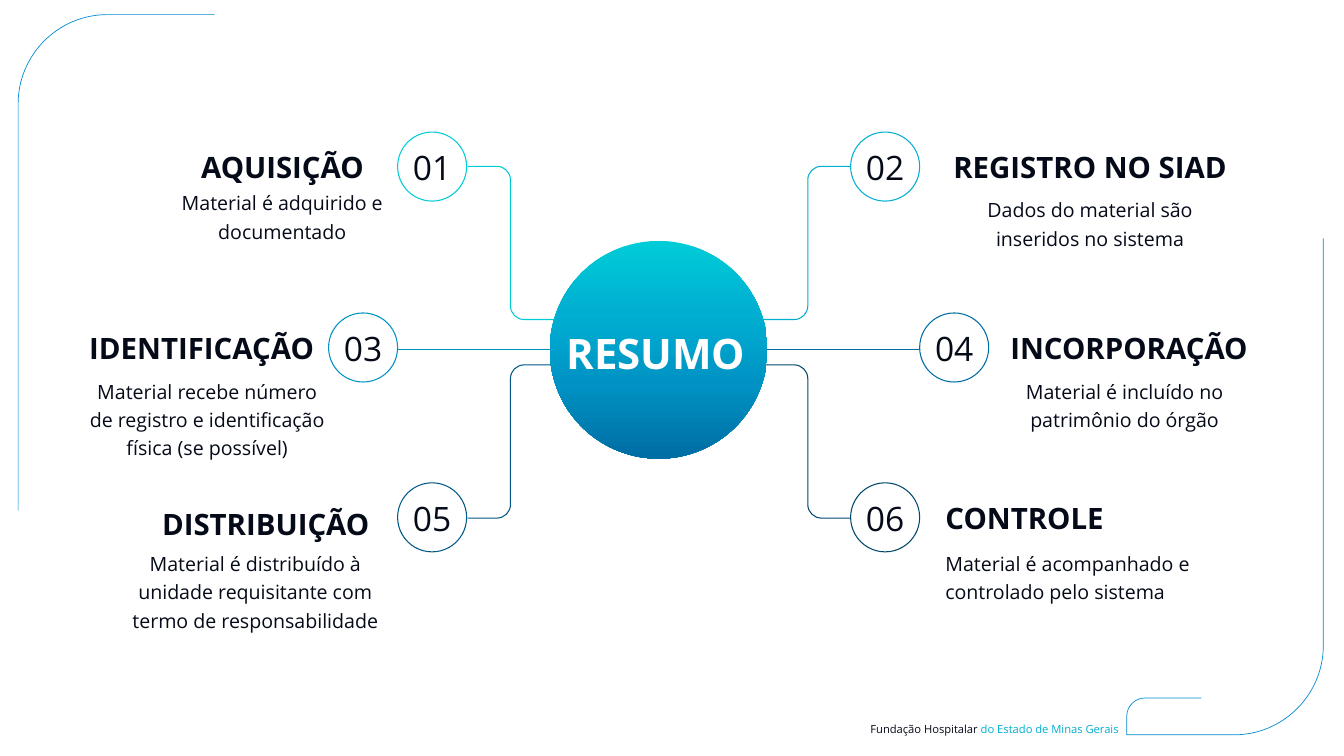
"""Builds the RESUMO slide: a central hub with six numbered steps around it."""
from copy import deepcopy
from dataclasses import dataclass

from lxml import etree
from pptx import Presentation
from pptx.dml.color import RGBColor
from pptx.enum.shapes import MSO_CONNECTOR, MSO_SHAPE
from pptx.enum.text import MSO_AUTO_SIZE, PP_ALIGN
from pptx.oxml.ns import qn
from pptx.util import Inches, Pt

LEFT, CENTER, RIGHT = PP_ALIGN.LEFT, PP_ALIGN.CENTER, PP_ALIGN.RIGHT
FIT = MSO_AUTO_SIZE.SHAPE_TO_FIT_TEXT
STRAIGHT = MSO_CONNECTOR.STRAIGHT
ELLIPSE = MSO_SHAPE.OVAL

RING = 1.37
MIRROR = 26.16
MIDDLE = 6.94
ARC_PULL = 0.55


@dataclass(frozen=True)
class Theme:
    font: str = "Open Sans"
    ink: str = "050A19"
    white: str = "FFFFFF"
    accent: str = "00AFD2"
    frame: str = "008BD2"
    steps: tuple = ("00CCD7", "00AFD2", "0092C3", "006DA4", "005986", "00486C")
    hub: tuple = ((0, "00CCD7"), (0.33, "00AFD2"), (0.66, "0092C3"), (1, "006DA4"))
    hub_size: int = 60
    number_size: int = 48
    title_size: int = 42
    body_size: int = 28
    footer_size: int = 16
    thin: float = 1
    line: float = 1.5


def toward(corner, target, distance):
    """Return the point at a distance from a corner along an axis-aligned leg."""
    return tuple(here + distance * ((there > here) - (there < here))
                 for here, there in zip(corner, target))


class Page:
    def __init__(self, slide, theme):
        self.shapes = slide.shapes
        self.theme = theme

    def stroke(self, shape, color, width):
        shape.line.color.rgb = RGBColor.from_string(color)
        shape.line.width = Pt(width)

    def route(self, corners, color, width):
        points, curves = [corners[0][:2]], {}
        for before, (x, y, radius), after in zip(corners, corners[1:], corners[2:]):
            corner = (x, y)
            points.append(toward(corner, before, radius))
            if radius:
                points.append(toward(corner, after, radius))
                pull = radius * (1 - ARC_PULL)
                curves[len(points) - 1] = [toward(corner, leg, pull) for leg in (before, after)]
        points.append(corners[-1][:2])
        origin = [min(axis) for axis in zip(*points)]
        points = [tuple(map(Inches, point)) for point in points]
        builder = self.shapes.build_freeform(*points[0])
        builder.add_line_segments(points[1:], close=False)
        shape = builder.convert_to_shape()
        outline = shape._element.spPr.find(".//" + qn("a:path"))
        for index, controls in curves.items():
            segment = outline[index]
            segment.tag = qn("a:cubicBezTo")
            for place, control in enumerate(controls):
                x, y = (str(Inches(value - start)) for value, start in zip(control, origin))
                segment.insert(place, etree.Element(qn("a:pt"), x=x, y=y))
        shape.shadow.inherit = False
        shape.fill.background()
        self.stroke(shape, color, width)

    def connector(self, start, end, y, color):
        line = self.shapes.add_connector(
            STRAIGHT, Inches(start), Inches(y), Inches(end), Inches(y))
        etree.SubElement(line._element.spPr, qn("a:effectLst"))
        self.stroke(line, color, self.theme.line)

    def circle(self, left, top, size):
        shape = self.shapes.add_shape(
            ELLIPSE, Inches(left), Inches(top), Inches(size), Inches(size))
        shape.shadow.inherit = False
        return shape

    def ring(self, left, top, color):
        shape = self.circle(left, top, RING)
        shape.fill.background()
        self.stroke(shape, color, self.theme.line)

    def hub(self, left, top, size):
        shape = self.circle(left, top, size)
        shape.line.fill.background()
        shape.fill.gradient()
        shape.fill.gradient_angle = 270
        stops = shape._element.spPr.find(".//" + qn("a:gsLst"))
        while len(stops) < len(self.theme.hub):
            stops.append(deepcopy(stops[0]))
        for stop, (position, color) in zip(shape.fill.gradient_stops, self.theme.hub):
            stop.position = position
            stop.color.rgb = RGBColor.from_string(color)

    def text(self, place, spans, size, align=LEFT, bold=False, spacing=None, inset=(0, 0)):
        box = self.shapes.add_textbox(*map(Inches, place))
        frame = box.text_frame
        across, down = map(Inches, inset)
        frame_format = dict(word_wrap=True, auto_size=FIT, margin_left=across,
                            margin_right=across, margin_top=down, margin_bottom=down)
        for name, value in frame_format.items():
            setattr(frame, name, value)
        para = frame.paragraphs[0]
        para.alignment = align
        para.line_spacing = spacing
        for words, color in spans:
            span = para.add_run()
            span.text = words
            for name, value in dict(name=self.theme.font, size=Pt(size), bold=bold).items():
                setattr(span.font, name, value)
            span.font.color.rgb = RGBColor.from_string(color)

    def step(self, index, ring, title, title_place, title_align, body, body_place, body_align):
        theme = self.theme
        left, top = ring
        self.ring(left, top, theme.steps[index])
        self.text((left + 0.14, top + 0.29, 1.09, 0.81),
                  [(f"{index + 1:02}", theme.ink)], theme.number_size, CENTER)
        self.text(title_place, [(title, theme.ink)], theme.title_size, title_align, bold=True)
        self.text(body_place, [(body, theme.ink)], theme.body_size, body_align, spacing=1.2)


STEPS = (
    ((7.89, 2.62), "AQUISIÇÃO", (3.81, 2.96, 3.59, 0.71), CENTER,
     "Material é adquirido e documentado", (3.31, 3.7, 4.58, 1.09), CENTER),
    ((16.88, 2.62), "REGISTRO NO SIAD", (18.76, 2.95, 5.74, 0.71), CENTER,
     "Dados do material são inseridos no sistema", (19.34, 3.84, 4.58, 1.09), CENTER),
    ((6.52, 6.21), "IDENTIFICAÇÃO", (1.72, 6.55, 4.51, 0.71), RIGHT,
     "Material recebe número de registro e identificação física (se possível)",
     (1.72, 7.44, 4.78, 1.66), CENTER),
    ((18.25, 6.21), "INCORPORAÇÃO", (20.05, 6.54, 5.13, 0.71), LEFT,
     "Material é incluído no patrimônio do órgão", (20.06, 7.44, 4.51, 1.09), CENTER),
    ((7.89, 9.58), "DISTRIBUIÇÃO", (2.75, 10.04, 4.58, 0.71), RIGHT,
     "Material é distribuído à unidade requisitante com termo de responsabilidade",
     (2.53, 10.86, 5.07, 1.66), CENTER),
    ((16.88, 9.58), "CONTROLE", (18.76, 9.92, 4.58, 0.71), LEFT,
     "Material é acompanhado e controlado pelo sistema",
     (18.76, 10.86, 5.24, 1.09), LEFT),
)


def main():
    theme = Theme()
    deck = Presentation()
    deck.slide_width, deck.slide_height = Inches(26.67), Inches(15)
    page = Page(deck.slides.add_slide(deck.slide_layouts[6]), theme)

    page.route([(26.26, 4.73), (26.26, 14.58, 1.77), (22.36, 14.58, 0),
                (22.36, 13.85, 0.36), (23.84, 13.85)], theme.frame, theme.thin)
    page.route([(0.36, 10.13), (0.36, 0.29, 1.77), (4.26, 0.29)], theme.frame, theme.thin)
    page.text((16.58, 14.33, 5.62, 0.27),
              [("Fundação Hospitalar ", theme.ink), ("do Estado de Minas Gerais", theme.accent)],
              theme.footer_size, RIGHT)

    page.connector(11.12, 7.89, MIDDLE, theme.steps[2])
    page.connector(18.25, 15.04, MIDDLE, theme.steps[3])
    for index, outer, inner in ((0, 3.3, 6.34), (4, 10.28, 7.24)):
        branch = [(9.28, outer), (10.13, outer, 0.27), (10.13, inner, 0.27), (11.12, inner)]
        mirrored = [(MIRROR - x, *rest) for x, *rest in branch]
        page.route(branch, theme.steps[index], theme.line)
        page.route(mirrored, theme.steps[index + 1], theme.line)

    for index, step in enumerate(STEPS):
        page.step(index, *step)

    page.hub(10.91, 4.78, 4.32)
    page.text((11.14, 6.45, 3.97, 1.11), [("RESUMO", theme.white)],
              theme.hub_size, bold=True, inset=(0.1, 0.05))
    deck.save("out.pptx")


if __name__ == "__main__":
    main()
